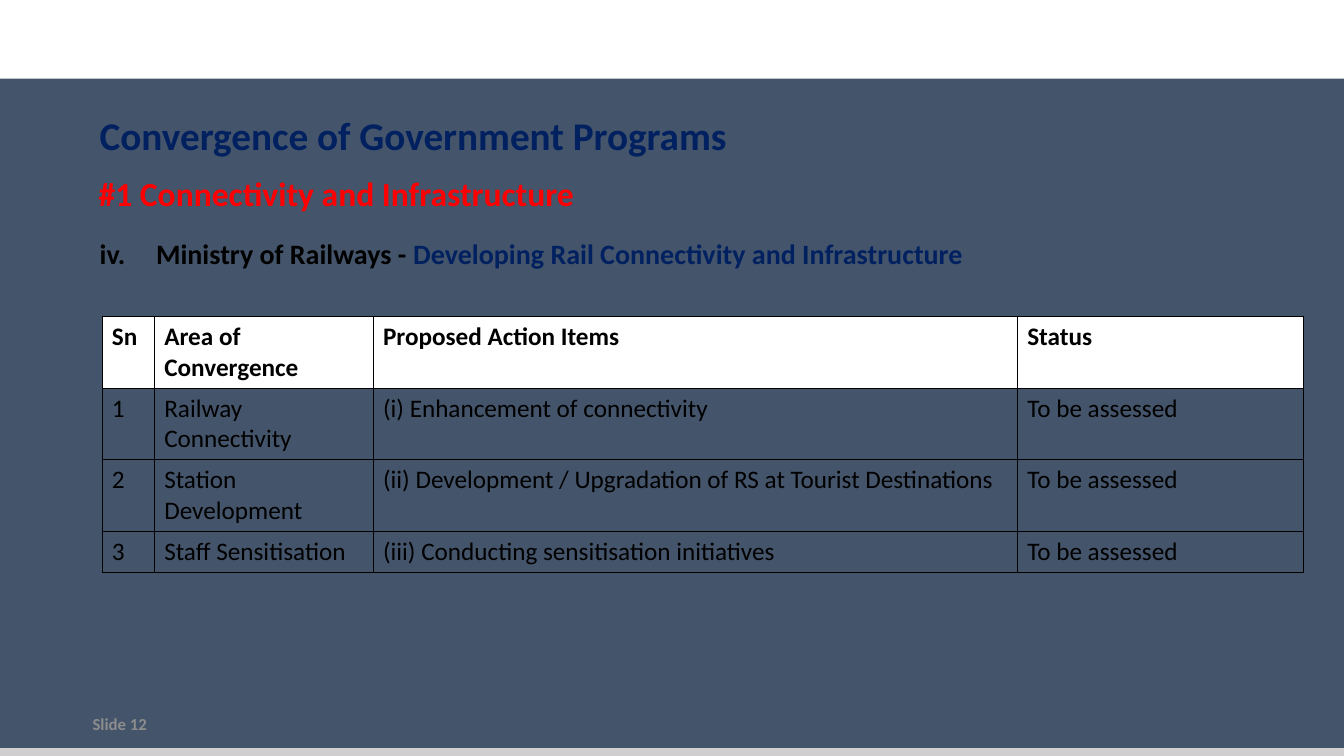
from lxml import etree
from pptx import Presentation
from pptx.dml.color import RGBColor
from pptx.enum.shapes import MSO_CONNECTOR, MSO_SHAPE
from pptx.enum.text import MSO_ANCHOR
from pptx.oxml.ns import qn
from pptx.util import Inches, Pt

MIDDLE, TOP = MSO_ANCHOR.MIDDLE, MSO_ANCHOR.TOP
WIDTH, HEIGHT = 13.33, 7.5
FONT = "Calibri"
COLORS = {
    "background": "44546A", "white": "FFFFFF", "rule": "D0CECE",
    "footer": "8C8C8C", "red": "FF0000", "navy": "002060", "black": "000000",
}

# Content: (left, top, width, height), anchor, size, [(text, color)]
TEXTS = {
    "footer": ((0.82, 7.05, 3, 0.27), MIDDLE, 12, [("Slide 12", "footer")]),
    "theme": ((0.88, 1.65, 11.8, 0.54), MIDDLE, 24,
              [("#1 Connectivity and Infrastructure", "red")]),
    "title": ((0.89, 1.01, 8.32, 0.65), MIDDLE, 28,
              [("Convergence of Government Programs", "navy")]),
    "ministry": ((0.89, 2.3, 11.8, 4.58), TOP, 20,
                 [("Ministry of Railways - ", "black"),
                  ("Developing Rail Connectivity and Infrastructure", "navy")]),
}
HEADER = ("Sn", "Area of Convergence", "Proposed Action Items", "Status")
ACTIONS = [
    ("Railway Connectivity", "(i) Enhancement of connectivity"),
    ("Station Development",
     "(ii) Development / Upgradation of RS at Tourist Destinations"),
    ("Staff Sensitisation", "(iii) Conducting sensitisation initiatives"),
]
STATUS = "To be assessed"
TABLE_LEFT, TABLE_TOP = 1.01, 3.14
COLUMN_WIDTHS = (0.52, 2.17, 6.39, 2.84)
ROW_HEIGHTS = (0.71, 0.71, 0.71, 0.41)
BAND_HEIGHT, RULE_TOP = 0.78, 7.46


def color(name):
    return RGBColor.from_string(COLORS[name])


def add_span(para, text, size, name, bold=True):
    span = para.add_run()
    span.text = text
    span.font.name, span.font.size, span.font.bold = FONT, Pt(size), bold
    span.font.color.rgb = color(name)


def add_text(page, place, anchor, size, spans):
    box = page.shapes.add_textbox(*map(Inches, place))
    box.text_frame.word_wrap = True
    box.text_frame.vertical_anchor = anchor
    para = box.text_frame.paragraphs[0]
    for text, name in spans:
        add_span(para, text, size, name)
    return para


def number_paragraph(para, start, indent):
    props = para._p.get_or_add_pPr()
    props.set("marL", str(Inches(indent)))
    props.set("indent", str(-Inches(indent)))
    etree.SubElement(props, qn("a:buAutoNum"),
                     type="romanLcPeriod", startAt=str(start))


def add_borders(cell):
    props = cell._tc.get_or_add_tcPr()
    for index, side in enumerate(("lnL", "lnR", "lnT", "lnB")):
        line = etree.Element(qn(f"a:{side}"), w=str(Pt(0.25)))
        fill = etree.SubElement(line, qn("a:solidFill"))
        etree.SubElement(fill, qn("a:srgbClr"), val=COLORS["black"])
        props.insert(index, line)


def add_action_table(page):
    rows = [HEADER] + [(str(number), area, action, STATUS)
                       for number, (area, action) in enumerate(ACTIONS, 1)]
    table = page.shapes.add_table(
        len(rows), len(HEADER), Inches(TABLE_LEFT), Inches(TABLE_TOP),
        Inches(sum(COLUMN_WIDTHS)), Inches(sum(ROW_HEIGHTS))).table
    table.horz_banding = False
    for column, width in zip(table.columns, COLUMN_WIDTHS):
        column.width = Inches(width)
    for row, height, texts in zip(table.rows, ROW_HEIGHTS, rows):
        row.height = Inches(height)
        is_header = texts is HEADER
        for cell, text in zip(row.cells, texts):
            if is_header:
                cell.fill.solid()
                cell.fill.fore_color.rgb = color("white")
            else:
                cell.fill.background()
            add_borders(cell)
            add_span(cell.text_frame.paragraphs[0], text, 18, "black", is_header)


def main():
    deck = Presentation()
    deck.slide_width, deck.slide_height = Inches(WIDTH), Inches(HEIGHT)
    page = deck.slides.add_slide(deck.slide_layouts[6])
    page.background.fill.solid()
    page.background.fill.fore_color.rgb = color("background")

    # Top band and bottom rule
    band = page.shapes.add_shape(MSO_SHAPE.RECTANGLE, 0, 0,
                                 Inches(WIDTH), Inches(BAND_HEIGHT))
    band.shadow.inherit = False
    band.fill.solid()
    band.fill.fore_color.rgb = color("white")
    band.line.fill.background()
    rule = page.shapes.add_connector(MSO_CONNECTOR.STRAIGHT, 0, Inches(RULE_TOP),
                                     Inches(WIDTH), Inches(RULE_TOP))
    rule.line.color.rgb = color("rule")
    rule.line.width = Pt(6)
    etree.SubElement(rule._element.spPr, qn("a:effectLst"))

    # Headings and footer
    paras = {name: add_text(page, *text) for name, text in TEXTS.items()}
    number_paragraph(paras["ministry"], start=4, indent=0.56)

    # Action items
    add_action_table(page)
    deck.save("out.pptx")


if __name__ == "__main__":
    main()
